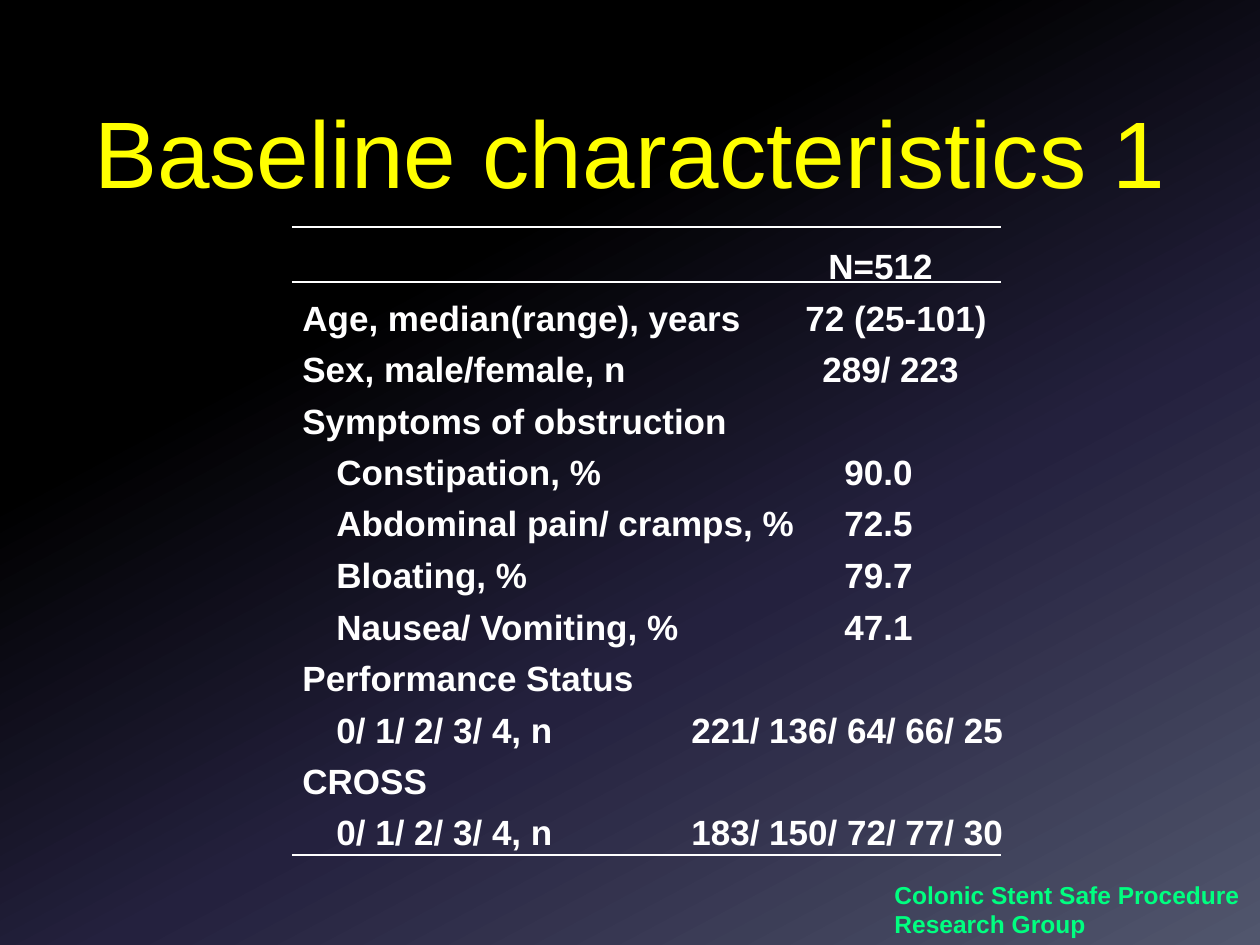
from copy import deepcopy
from lxml.etree import SubElement
from pptx import Presentation
from pptx.dml.color import RGBColor
from pptx.enum.shapes import MSO_CONNECTOR
from pptx.enum.text import MSO_ANCHOR, PP_ALIGN
from pptx.oxml.ns import qn
from pptx.util import Pt

SCALE = 914400 / 126
HEX = {"black": "000000", "navy": "24213E", "slate": "51566D",
       "white": "FFFFFF", "yellow": "FFFF00", "green": "00FF80"}
STOPS = [(0, "black"), (0.31, "black"), (0.62, "navy"), (1, "slate")]
INDENT = 34
ROWS = [
    ("Age, median(range), years", 0, 467, "72 (25-101)", 501, 208),
    ("Sex, male/female, n", 0, 352, "289/ 223", 518, 163),
    ("Symptoms of obstruction", 0, 454, "", 0, 0),
    ("Constipation, %", 1, 292, "90.0", 540, 94),
    ("Abdominal pain/ cramps, %", 1, 486, "72.5", 540, 94),
    ("Bloating, %", 1, 218, "79.7", 540, 94),
    ("Nausea/ Vomiting, %", 1, 370, "47.1", 540, 94),
    ("Performance Status", 0, 359, "", 0, 0),
    ("0/ 1/ 2/ 3/ 4, n", 1, 243, "221/ 136/ 64/ 66/ 25", 387, 340),
    ("CROSS", 0, 151, "", 0, 0),
    ("0/ 1/ 2/ 3/ 4, n", 1, 243, "183/ 150/ 72/ 77/ 30", 387, 340),
]


def px(num):
    return round(num * SCALE)


def color(name):
    return RGBColor.from_string(HEX[name])


def put_text(slide, text, box, size=20, hue="white", bold=True, align=PP_ALIGN.LEFT,
             anchor=MSO_ANCHOR.TOP, wrap=False, top=9):
    frame = slide.shapes.add_textbox(*map(px, box)).text_frame
    frame.word_wrap = wrap
    frame.vertical_anchor = anchor
    frame.margin_top = px(top)
    for num, line in enumerate(text.split("\n")):
        para = frame.paragraphs[0] if num == 0 else frame.add_paragraph()
        para.alignment = align
        run = para.add_run()
        run.text = line
        run.font.name = "Arial"
        run.font.size = Pt(size)
        run.font.bold = bold
        run.font.color.rgb = color(hue)


def put_rule(slide, left, top, width, weight):
    rule = slide.shapes.add_connector(
        MSO_CONNECTOR.STRAIGHT, px(left), px(top), px(left + width), px(top))
    rule.line.color.rgb = color("white")
    rule.line.width = Pt(weight)
    SubElement(rule._element.spPr, qn("a:effectLst"))


def paint_back(slide):
    fill = slide.background.fill
    fill.gradient()
    fill.gradient_angle = 360 - 62
    stops = slide.element.find(".//" + qn("a:gsLst"))
    for _ in STOPS[2:]:
        stops.append(deepcopy(stops[0]))
    for stop, (place, name) in zip(fill.gradient_stops, STOPS):
        stop.position = place
        stop.color.rgb = color(name)


def draw_title(slide, box):
    put_text(slide, "Baseline characteristics 1", box, size=54, hue="yellow", bold=False,
             align=PP_ALIGN.CENTER, wrap=True, top=16)


def draw_table(slide, box):
    left, top, width, height = box
    for drop, weight in ((0, 1.5), (55, 0.75), (height, 1.5)):
        put_rule(slide, left, top + drop, width, weight)
    put_text(slide, "N=512", (left + 524, top + 9, 131, 55))
    first, last = top + 60, top + height - 53
    step = (last - first) / (len(ROWS) - 1)
    for num, (label, level, wide, value, shift, span) in enumerate(ROWS):
        y = first + num * step
        put_text(slide, label, (left - 2 + level * INDENT, y, wide, 55))
        if value:
            put_text(slide, value, (left + shift, y, span, 55))


def draw_footer(slide, box):
    put_text(slide, "Colonic Stent Safe Procedure\nResearch Group", box, size=14, hue="green")


def main():
    deck = Presentation()
    deck.slide_width, deck.slide_height = px(1260), px(945)
    slide = deck.slides.add_slide(deck.slide_layouts[6])
    paint_back(slide)
    draw_footer(slide, (882, 871, 374, 72))
    draw_title(slide, (63, 78, 1134, 158))
    draw_table(slide, (292, 227, 709, 628))
    deck.save("out.pptx")


if __name__ == "__main__":
    main()
